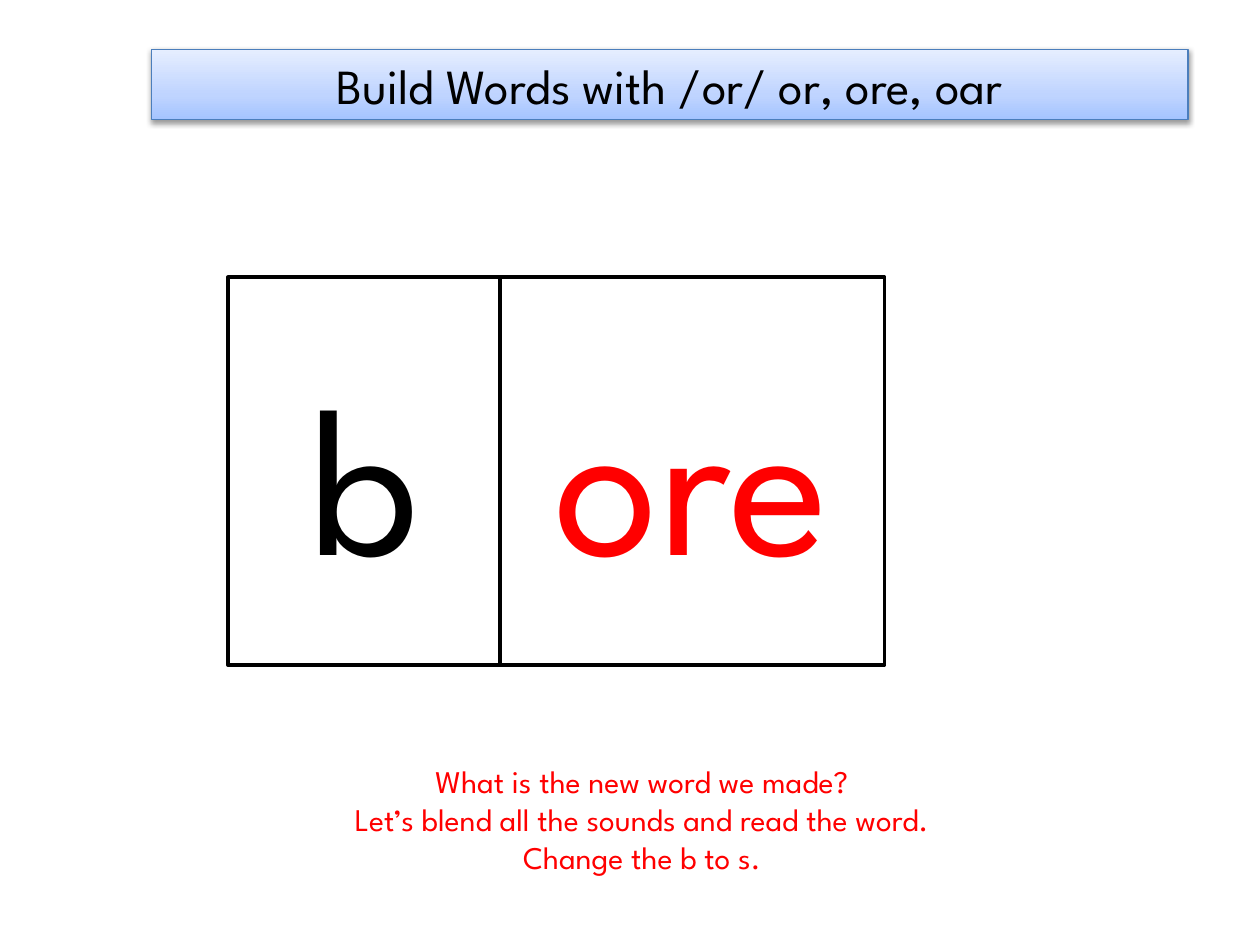
from copy import deepcopy

from lxml import etree
from pptx import Presentation
from pptx.dml.color import RGBColor as RGB
from pptx.enum.shapes import MSO_SHAPE as SHAPE
from pptx.enum.text import MSO_ANCHOR as ANCHOR, MSO_AUTO_SIZE as AUTO, PP_ALIGN as ALIGN
from pptx.oxml import parse_xml
from pptx.oxml.ns import nsdecls, qn
from pptx.util import Inches, Pt

THEME = {
    "font": "League Spartan",
    "title": 28, "letters": 120, "prompt": 18,
    "black": RGB(0, 0, 0), "red": RGB(255, 0, 0), "white": RGB(255, 255, 255),
    "banner_line": RGB(0x4B, 0x7E, 0xBC),
    "banner_stops": [(0, "A4C4FF"), (0.35, "BFD4FF"), (1, "E6EEFF")],
}


def write(tf, lines, size, color):
    """Fill a text frame with centred lines in one style."""
    tf.word_wrap = True
    tf.text = "\n".join(lines)
    for p in tf.paragraphs:
        p.alignment = ALIGN.CENTER
        p.font.name = THEME["font"]
        p.font.size = Pt(THEME[size])
        p.font.color.rgb = THEME[color]


prs = Presentation()
prs.slide_width, prs.slide_height = Inches(10), Inches(7.5)
s = prs.slides.add_slide(prs.slide_layouts[5])

# Title banner
title = s.shapes.title
title.left, title.top = Inches(1.2), Inches(0.39)
title.width, title.height = Inches(8.23), Inches(0.56)
write(title.text_frame, ["Build Words with /or/ or, ore, oar"], "title", "black")
title.text_frame.auto_size = AUTO.NONE
title.text_frame.vertical_anchor = ANCHOR.MIDDLE

title.fill.gradient()
title.fill.gradient_angle = 90
stops = title._element.spPr.find(".//" + qn("a:gsLst"))
stops.insert(1, deepcopy(stops[0]))
for stop, (position, color) in zip(title.fill.gradient_stops, THEME["banner_stops"]):
    stop.position = position
    stop.color.rgb = RGB.from_string(color)
title.line.color.rgb = THEME["banner_line"]
title.line.width = Pt(0.75)

title.shadow.inherit = False
effects = title._element.spPr.find(qn("a:effectLst"))
effects.append(parse_xml(
    f'<a:outerShdw {nsdecls("a")} blurRad="{Pt(3.1)}" dist="{Pt(1.6)}" dir="5400000" rotWithShape="0">'
    '<a:srgbClr val="000000"><a:alpha val="38000"/></a:srgbClr></a:outerShdw>'))

# Letter boxes, side by side
left = 1.81
for letters, width, color in [("b", 2.16, "black"), ("ore", 3.05, "red")]:
    sp = s.shapes.add_shape(SHAPE.RECTANGLE, Inches(left), Inches(2.2), Inches(width), Inches(3.08))
    sp.shadow.inherit = False
    sp.fill.solid()
    sp.fill.fore_color.rgb = THEME["white"]
    sp.line.color.rgb = THEME["black"]
    sp.line.width = Pt(2)
    write(sp.text_frame, [letters], "letters", color)
    sp.text_frame.vertical_anchor = ANCHOR.MIDDLE
    left += width

# Teacher prompt
prompt = s.shapes.add_textbox(Inches(1.61), Inches(6), Inches(6.97), Inches(1.01))
write(prompt.text_frame, [
    "What is the new word we made?",
    "Let’s blend all the sounds and read the word.",
    "Change the b to s.",
], "prompt", "red")
prompt.text_frame.auto_size = AUTO.SHAPE_TO_FIT_TEXT

prs.save("out.pptx")
